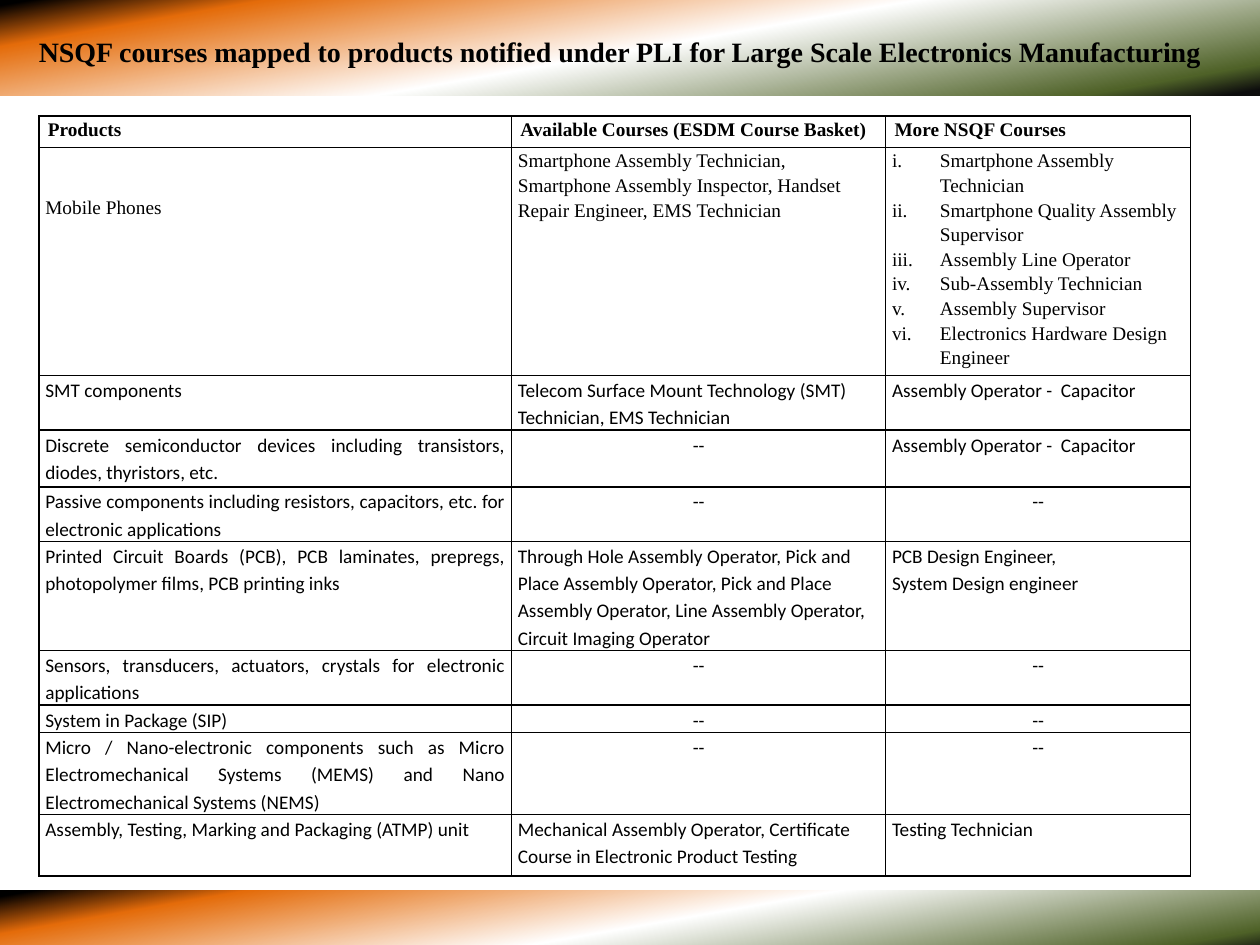
from dataclasses import dataclass

from lxml import etree
from pptx import Presentation
from pptx import util as u
from pptx.dml.color import RGBColor
from pptx.enum import shapes, text
from pptx.oxml import ns


@dataclass(frozen=True)
class Theme:
    ink: RGBColor = RGBColor(0, 0, 0)
    serif: str = "Times New Roman"
    sans: str = "Calibri"
    title_size: u.Pt = u.Pt(16)
    table_size: u.Pt = u.Pt(11)
    border: u.Pt = u.Pt(1)
    spacing: float = 1.15
    stops: tuple = ((2, "0D0D0D"), (10, "4F6228"), (49, "FFFFFF"),
                    (85, "E46C0A"), (98, "000000"))
    angle: int = 260


THEME = Theme()
LEFT, CENTER, JUSTIFY = (text.PP_ALIGN.LEFT, text.PP_ALIGN.CENTER,
                         text.PP_ALIGN.JUSTIFY)
NONE = "--"
COLUMNS = (3.75, 2.97, 2.42)
HEIGHTS = (0.25, 1.81, 0.39, 0.45, 0.39, 0.8, 0.39, 0.21, 0.6, 0.49)
TITLE = ("NSQF courses mapped to products notified under PLI "
         "for Large Scale Electronics Manufacturing")
ROWS = (
    ("Products", "Available Courses (ESDM Course Basket)", "More NSQF Courses"),
    ("Mobile Phones",
     "Smartphone Assembly Technician, Smartphone Assembly Inspector, "
     "Handset Repair Engineer, EMS Technician",
     "Smartphone Assembly Technician\nSmartphone Quality Assembly Supervisor\n"
     "Assembly Line Operator\nSub-Assembly Technician\nAssembly Supervisor\n"
     "Electronics Hardware Design Engineer"),
    ("SMT components",
     "Telecom Surface Mount Technology (SMT) Technician, EMS Technician",
     "Assembly Operator -  Capacitor"),
    ("Discrete semiconductor devices including transistors, diodes, "
     "thyristors, etc.", NONE, "Assembly Operator -  Capacitor"),
    ("Passive components including resistors, capacitors, etc. for electronic "
     "applications", NONE, NONE),
    ("Printed Circuit Boards (PCB), PCB laminates, prepregs, photopolymer "
     "films, PCB printing inks",
     "Through Hole Assembly Operator, Pick and Place Assembly Operator, Pick "
     "and Place Assembly Operator, Line Assembly Operator, Circuit Imaging "
     "Operator",
     "PCB Design Engineer,\nSystem Design engineer"),
    ("Sensors, transducers, actuators, crystals for electronic applications",
     NONE, NONE),
    ("System in Package (SIP)", NONE, NONE),
    ("Micro / Nano-electronic components such as Micro Electromechanical "
     "Systems (MEMS) and Nano Electromechanical Systems (NEMS)", NONE, NONE),
    ("Assembly, Testing, Marking and Packaging (ATMP) unit",
     "Mechanical Assembly Operator, Certificate Course in Electronic Product "
     "Testing", "Testing Technician"),
)


def apply(obj, **values):
    for name, value in values.items():
        setattr(obj, name, value)


def child(parent, tag, **attrs):
    return etree.SubElement(parent, ns.qn(tag), attrs)


def place(sp, *box):
    apply(sp, **dict(zip(("left", "top", "width", "height"),
                         map(u.Inches, box))))


def write(p, words, align, font, size, bold):
    p.alignment = align
    r = p.add_run()
    r.text = words
    apply(r.font, name=font, size=size, bold=bold)
    r.font.color.rgb = THEME.ink


def add_band(s, *box):
    sp = s.shapes.add_shape(shapes.MSO_SHAPE.RECTANGLE, *map(u.Inches, box))
    sp.shadow.inherit = False
    sp.line.fill.background()
    sp.fill.gradient()
    grad = sp._element.spPr.find(ns.qn("a:gradFill"))
    for el in list(grad):
        grad.remove(el)
    stops = child(grad, "a:gsLst")
    for pos, colour in THEME.stops:
        stop = child(stops, "a:gs", pos=str(pos * 1000))
        child(stop, "a:srgbClr", val=colour)
    child(grad, "a:lin", ang=str(THEME.angle * 60000), scaled="0")


def set_title(s):
    sp = s.shapes.title
    place(sp, -0.08, 0.22, 10, 0.37)
    s.shapes._spTree.append(sp._element)
    tf = sp.text_frame
    apply(tf, word_wrap=True, auto_size=text.MSO_AUTO_SIZE.NONE,
          vertical_anchor=text.MSO_ANCHOR.MIDDLE)
    write(tf.paragraphs[0], TITLE, CENTER, THEME.serif, THEME.title_size, True)


def add_borders(cell):
    pr = cell._tc.get_or_add_tcPr()
    for side in ("a:lnL", "a:lnR", "a:lnT", "a:lnB"):
        ln = child(pr, side, w=str(THEME.border))
        child(child(ln, "a:solidFill"), "a:srgbClr", val=str(THEME.ink))


def number(p):
    pr = p._p.get_or_add_pPr()
    apply_indent = {"marL": u.Inches(0.38), "indent": u.Inches(-0.38)}
    for name, value in apply_indent.items():
        pr.set(name, str(value))
    child(pr, "a:buFont", typeface="+mj-lt")
    child(pr, "a:buAutoNum", type="romanLcPeriod")


def fill_cell(cell, words, row, col):
    header = row == 0
    side = u.Inches(0.07 if header else 0.05)
    top = u.Inches(0.37 if (row, col) == (1, 0) else 0)
    apply(cell, margin_left=side, margin_right=side, margin_top=top,
          margin_bottom=0)
    add_borders(cell)
    cell.fill.background()
    align = LEFT
    if words == NONE:
        align = CENTER
    elif col == 0 and not header:
        align = JUSTIFY
    tf = cell.text_frame
    for i, line in enumerate(words.split("\n")):
        p = tf.add_paragraph() if i else tf.paragraphs[0]
        if (row, col) == (1, 2):
            number(p)
        p.line_spacing = THEME.spacing
        font = THEME.serif if row < 2 else THEME.sans
        write(p, line, align, font, THEME.table_size, header)


def add_courses(s):
    box = map(u.Inches, (0.31, 0.92, sum(COLUMNS), sum(HEIGHTS)))
    table = s.shapes.add_table(len(ROWS), len(COLUMNS), *box).table
    apply(table, first_row=False, horz_banding=False)
    for column, width in zip(table.columns, COLUMNS):
        column.width = u.Inches(width)
    for i, (row, height) in enumerate(zip(table.rows, HEIGHTS)):
        row.height = u.Inches(height)
        for j, words in enumerate(ROWS[i]):
            fill_cell(row.cells[j], words, i, j)


def main():
    prs = Presentation()
    apply(prs, slide_width=u.Inches(10), slide_height=u.Inches(7.5))
    s = prs.slides.add_slide(prs.slide_layouts[5])
    add_band(s, -0.02, 7.07, 10.02, 0.54)
    add_band(s, 0, -0.01, 10.02, 0.77)
    set_title(s)
    add_courses(s)
    prs.save("out.pptx")


if __name__ == "__main__":
    main()
